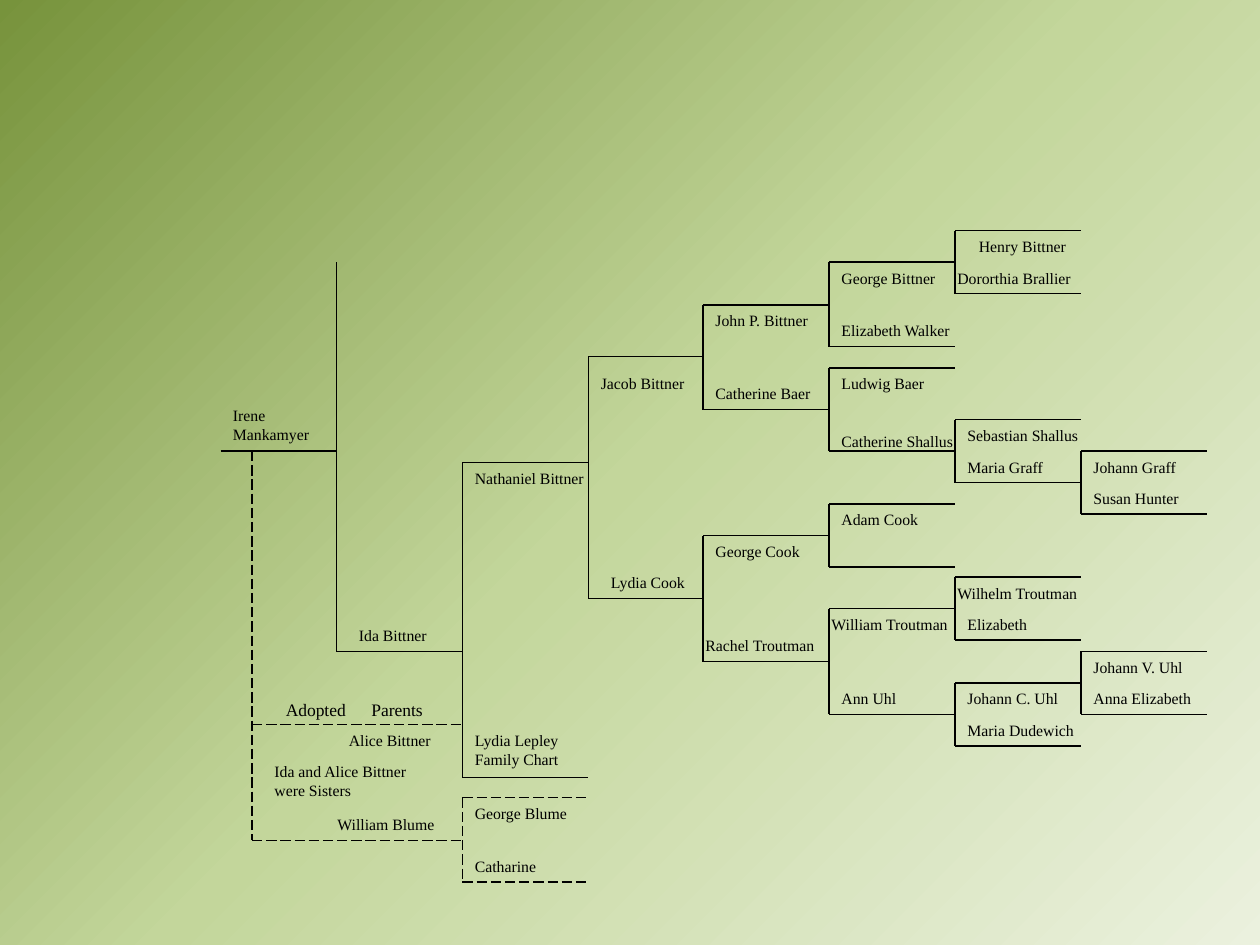
from lxml import etree
from pptx import Presentation
from pptx.dml.color import RGBColor
from pptx.enum.dml import MSO_LINE
from pptx.enum.shapes import MSO_CONNECTOR
from pptx.enum.text import MSO_AUTO_SIZE
from pptx.oxml.ns import qn
from pptx.util import Inches, Pt

STRAIGHT = MSO_CONNECTOR.STRAIGHT
LONG_DASH = MSO_LINE.LONG_DASH
FIT_SHAPE = MSO_AUTO_SIZE.SHAPE_TO_FIT_TEXT
COLORS = {"ink": "000000", "pale": "EBF1DE", "light": "C3D69B",
          "olive": "77933C", "dark": "4F6228"}
BACKGROUND_STOPS = [(0, "pale"), (50, "light"), (100, "olive"), (100, "dark")]

# Couples: left, top branch, bottom branch, branch length
COUPLES = [
    (3.67, 3.67, 6.17, 1), (4.67, 2.83, 4.75, 0.91),
    (5.58, 2.42, 3.25, 1), (5.58, 4.25, 5.25, 1),
    (6.58, 2.08, 2.75, 1), (6.58, 2.92, 3.58, 1),
    (6.58, 4, 4.5, 1), (6.58, 4.83, 5.67, 1),
    (7.58, 1.83, 2.33, 1), (7.58, 3.33, 3.83, 1),
    (7.58, 4.58, 5.08, 1), (7.58, 5.42, 5.92, 1),
    (8.58, 3.58, 4.08, 1), (8.58, 5.17, 5.67, 1),
]

# People: name, left, top, width
PEOPLE = [
    ("Irene\nMankamyer", 1.75, 3.17, 0.92),
    ("Ida Bittner", 2.75, 4.92, 0.75),
    ("Nathaniel Bittner", 3.67, 3.67, 1.08),
    ("Lydia Lepley\nFamily Chart", 3.67, 5.75, 1.17),
    ("Jacob Bittner", 4.67, 2.92, 1),
    ("Lydia Cook", 4.75, 4.5, 0.92),
    ("John P. Bittner", 5.58, 2.42, 1),
    ("Catherine Baer", 5.58, 3, 1.25),
    ("George Cook", 5.58, 4.25, 0.92),
    ("Rachel Troutman", 5.5, 5, 1.08),
    ("George Bittner", 6.58, 2.08, 1.08),
    ("Elizabeth Walker", 6.58, 2.5, 1.08),
    ("Ludwig Baer", 6.58, 2.92, 1.25),
    ("Catherine Shallus", 6.58, 3.38, 1.16),
    ("Adam Cook", 6.58, 4, 0.92),
    ("William Troutman", 6.5, 4.83, 1.25),
    ("Ann Uhl", 6.58, 5.42, 0.75),
    ("Henry Bittner", 7.67, 1.83, 0.92),
    ("Dororthia Brallier", 7.5, 2.08, 1.33),
    ("Sebastian Shallus", 7.58, 3.33, 1.08),
    ("Maria Graff", 7.58, 3.58, 1),
    ("Wilhelm Troutman", 7.5, 4.58, 1.25),
    ("Elizabeth", 7.58, 4.83, 0.75),
    ("Johann C. Uhl", 7.58, 5.42, 1.08),
    ("Maria Dudewich", 7.58, 5.67, 1.08),
    ("Johann Graff", 8.58, 3.58, 1),
    ("Susan Hunter", 8.58, 3.83, 1),
    ("Johann V. Uhl", 8.58, 5.17, 1),
    ("Anna Elizabeth", 8.58, 5.42, 1),
    ("Alice Bittner", 2.67, 5.75, 0.92),
    ("William Blume", 2.58, 6.42, 1.17),
    ("George Blume", 3.67, 6.33, 1.17),
    ("Catharine", 3.67, 6.75, 0.83),
]


class FamilyChart:
    font = "Times New Roman"
    line_width = Pt(0.75)

    def __init__(self, s):
        self.s = s

    def background(self, stops):
        """Gradient spreading from the bottom right corner."""
        self.s.background.fill.gradient()
        grad = self.s.background._cSld.find(".//" + qn("a:gradFill"))
        grad.clear()
        gs_list = etree.SubElement(grad, qn("a:gsLst"))
        for percent, color in stops:
            gs = etree.SubElement(gs_list, qn("a:gs"), pos=str(percent * 1000))
            etree.SubElement(gs, qn("a:srgbClr"), val=COLORS[color])
        circle = etree.SubElement(grad, qn("a:path"), {"path": "circle"})
        etree.SubElement(circle, qn("a:fillToRect"), l="100000", t="100000")

    def line(self, x1, y1, x2, y2, dashed=False):
        c = self.s.shapes.add_connector(
            STRAIGHT, Inches(x1), Inches(y1), Inches(x2), Inches(y2))
        c.line.color.rgb = RGBColor.from_string(COLORS["ink"])
        c.line.width = self.line_width
        if dashed:
            c.line.dash_style = LONG_DASH
        etree.SubElement(c._element.spPr, qn("a:effectLst"))

    def couple(self, x, top, bottom, length, dashed=False):
        self.line(x, top, x, bottom, dashed)
        for y in (top, bottom):
            self.line(x, y, x + length, y, dashed)

    def label(self, text, x, y, w, h=0.25, size=9):
        if "\n" in text:
            h = 0.4
        sp = self.s.shapes.add_textbox(Inches(x), Inches(y), Inches(w), Inches(h))
        tf = sp.text_frame
        tf.word_wrap = True
        tf.auto_size = FIT_SHAPE
        tf.text = text
        for p in tf.paragraphs:
            for r in p.runs:
                r.font.name = self.font
                r.font.size = Pt(size)
                r.font.color.rgb = RGBColor.from_string(COLORS["ink"])
        return tf

    def tab_stop(self, p, position):
        tabs = etree.SubElement(p._p.get_or_add_pPr(), qn("a:tabLst"))
        etree.SubElement(tabs, qn("a:tab"), pos=str(Inches(position)), algn="l")


def main():
    prs = Presentation()
    prs.slide_width, prs.slide_height = Inches(10), Inches(7.5)
    chart = FamilyChart(prs.slides.add_slide(prs.slide_layouts[6]))
    chart.background(BACKGROUND_STOPS)

    # Irene and her mother's branch
    chart.line(1.75, 3.58, 2.67, 3.58)
    chart.line(2.67, 2.08, 2.67, 5.17)
    chart.line(2.67, 5.17, 3.67, 5.17)

    # Ancestors
    for couple in COUPLES:
        chart.couple(*couple)

    # Adoptive family
    chart.line(2, 3.58, 2, 6.67, dashed=True)
    for y in (5.75, 6.67):
        chart.line(2, y, 3.67, y, dashed=True)
    chart.couple(3.67, 6.33, 7, 1, dashed=True)

    # Names and remarks
    for person in PEOPLE:
        chart.label(*person)
    tf = chart.label("Adopted\tParents", 2.17, 5.5, 1.5, 0.27, size=10)
    chart.tab_stop(tf.paragraphs[0], 0.68)
    chart.label("Ida and Alice Bittner were Sisters", 2.08, 6, 1.5, 0.4)

    prs.save("out.pptx")


if __name__ == "__main__":
    main()
